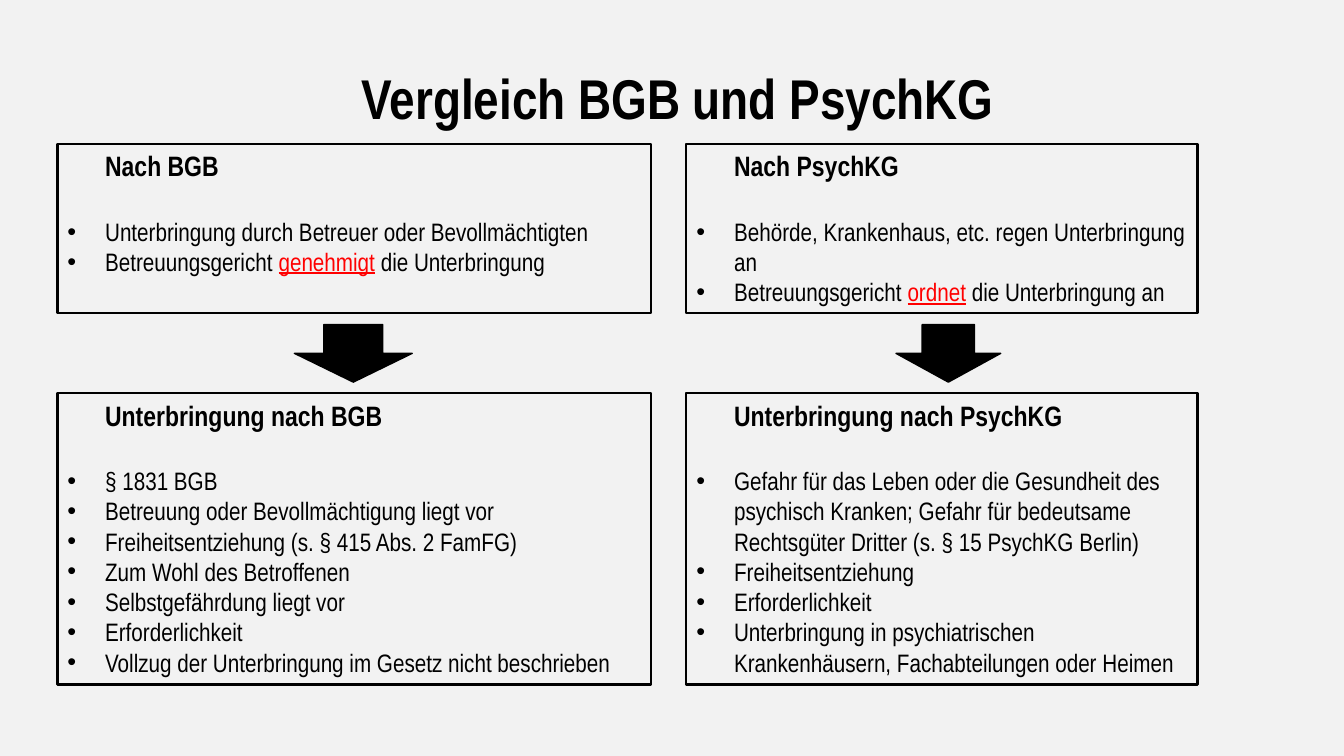
from lxml import etree
from pptx import Presentation
from pptx import util as u
from pptx.dml.color import RGBColor
from pptx.enum import shapes, text
from pptx.oxml.ns import qn

BLACK = RGBColor(0x00, 0x00, 0x00)
RED = RGBColor(0xFF, 0x00, 0x00)
BACKGROUND = RGBColor(0xF2, 0xF2, 0xF2)
FONT = "Arial Narrow"
INDENT = u.Cm(0.95)


def add_text(paragraph, content, size=18, bold=False, color=BLACK, underline=False):
    run = paragraph.add_run()
    run.text = content
    font = run.font
    font.name, font.size, font.bold = FONT, u.Pt(size), bold
    font.color.rgb = color
    font.underline = underline


def indent(paragraph, bullet=False):
    properties = paragraph._p.get_or_add_pPr()
    properties.set("marL", str(INDENT))
    properties.set("indent", str(-INDENT if bullet else 0))
    if bullet:
        etree.SubElement(properties, qn("a:buFont")).set("typeface", "Arial")
        etree.SubElement(properties, qn("a:buChar")).set("char", "•")


class ComparisonSlide:
    def __init__(self, presentation):
        self.slide = presentation.slides.add_slide(presentation.slide_layouts[5])
        fill = self.slide.background.fill
        fill.solid()
        fill.fore_color.rgb = BACKGROUND

    def title(self, content, left, top, width, height):
        title = self.slide.shapes.title
        title.left, title.top = u.Cm(left), u.Cm(top)
        title.width, title.height = u.Cm(width), u.Cm(height)
        paragraph = title.text_frame.paragraphs[0]
        paragraph.alignment = text.PP_ALIGN.CENTER
        add_text(paragraph, content, size=40, bold=True)

    def shape(self, kind, left, top, width, height, line_width):
        shape = self.slide.shapes.add_shape(
            kind, u.Cm(left), u.Cm(top), u.Cm(width), u.Cm(height))
        shape.shadow.inherit = False
        shape.line.color.rgb = BLACK
        shape.line.width = u.Pt(line_width)
        return shape

    def box(self, heading, bullets, left, top, width, height):
        box = self.shape(shapes.MSO_SHAPE.RECTANGLE, left, top, width, height, 1.5)
        box.fill.background()
        frame = box.text_frame
        frame.word_wrap = True
        frame.vertical_anchor = text.MSO_ANCHOR.TOP
        paragraph = frame.paragraphs[0]
        paragraph.alignment = text.PP_ALIGN.LEFT
        paragraph.space_after = u.Pt(24)
        indent(paragraph)
        add_text(paragraph, heading, size=20, bold=True)
        for bullet in bullets:
            paragraph = frame.add_paragraph()
            paragraph.alignment = text.PP_ALIGN.LEFT
            indent(paragraph, bullet=True)
            # Text between asterisks is emphasised
            for position, part in enumerate(bullet.split("*")):
                marked = position % 2 == 1
                add_text(paragraph, part, color=RED if marked else BLACK,
                         underline=marked)

    def down_arrow(self, left, top, width, height):
        arrow = self.shape(shapes.MSO_SHAPE.DOWN_ARROW, left, top, width, height, 1)
        arrow.fill.solid()
        arrow.fill.fore_color.rgb = BLACK


# Each column: left, width, arrow left, arrow width, upper box, lower box
COLUMNS = [
    (1.45, 14.96, 7.42, 2.97,
     ("Nach BGB", [
         "Unterbringung durch Betreuer oder Bevollmächtigten",
         "Betreuungsgericht *genehmigt* die Unterbringung"]),
     ("Unterbringung nach BGB", [
         "§ 1831 BGB",
         "Betreuung oder Bevollmächtigung liegt vor",
         "Freiheitsentziehung (s. § 415 Abs. 2 FamFG)",
         "Zum Wohl des Betroffenen",
         "Selbstgefährdung liegt vor",
         "Erforderlichkeit",
         "Vollzug der Unterbringung im Gesetz nicht beschrieben"])),
    (17.3, 12.88, 22.58, 2.64,
     ("Nach PsychKG", [
         "Behörde, Krankenhaus, etc. regen Unterbringung an",
         "Betreuungsgericht *ordnet* die Unterbringung an"]),
     ("Unterbringung nach PsychKG", [
         "Gefahr für das Leben oder die Gesundheit des psychisch Kranken; "
         "Gefahr für bedeutsame Rechtsgüter Dritter (s. § 15 PsychKG Berlin)",
         "Freiheitsentziehung",
         "Erforderlichkeit",
         "Unterbringung in psychiatrischen Krankenhäusern, "
         "Fachabteilungen oder Heimen"])),
]


def main():
    presentation = Presentation()
    presentation.slide_width = u.Cm(33.87)
    presentation.slide_height = u.Cm(19.05)

    # Title
    comparison = ComparisonSlide(presentation)
    comparison.title("Vergleich BGB und PsychKG", 2.82, 1.47, 28.52, 1.96)

    # Columns: procedure, arrow, conditions
    for left, width, arrow_left, arrow_width, procedure, conditions in COLUMNS:
        comparison.box(*procedure, left, 3.63, width, 4.27)
        comparison.down_arrow(arrow_left, 8.18, arrow_width, 1.45)
        comparison.box(*conditions, left, 9.91, width, 7.34)

    presentation.save("out.pptx")


if __name__ == "__main__":
    main()
